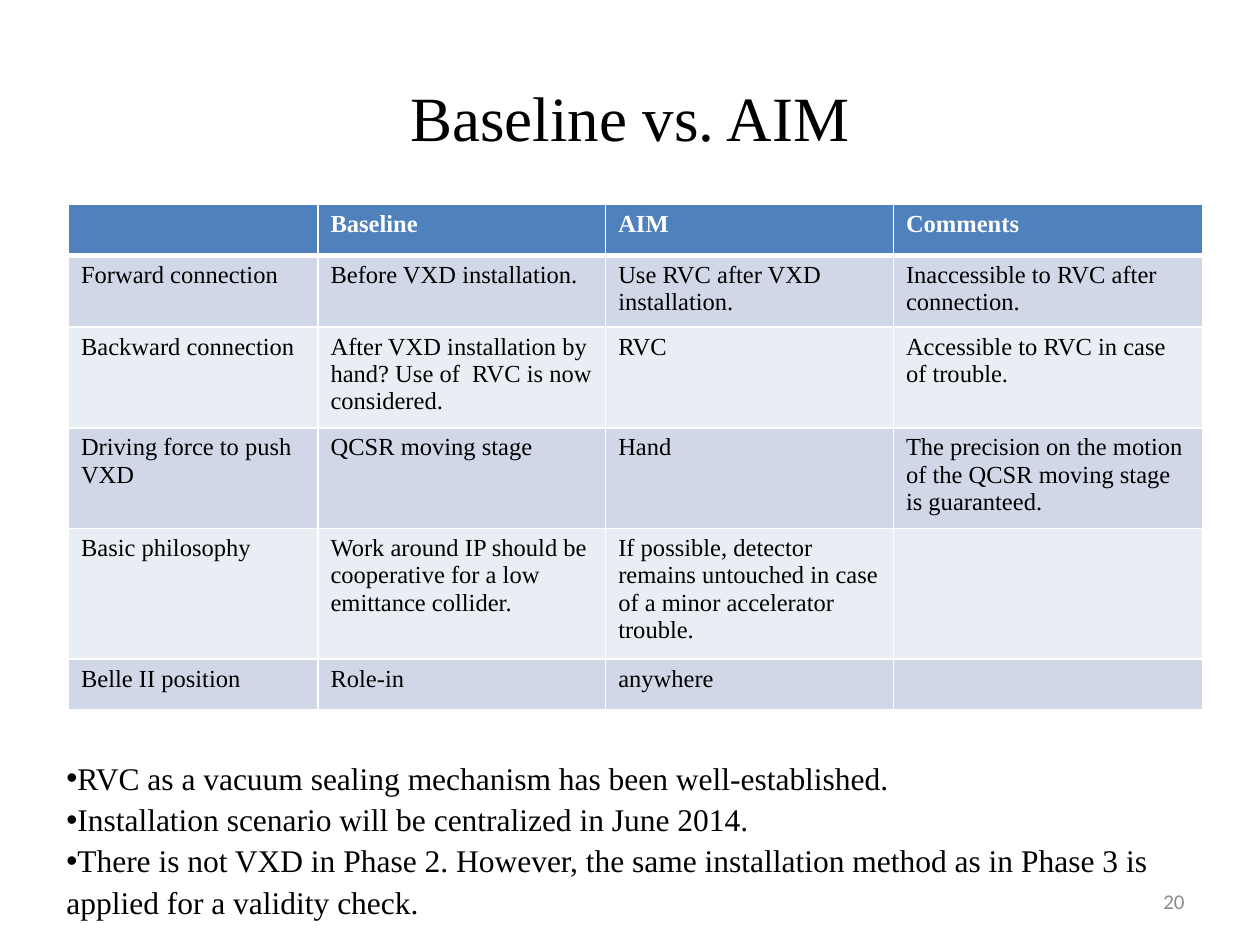
from lxml.etree import SubElement
from pptx import Presentation
from pptx.dml.color import RGBColor
from pptx.enum.text import MSO_ANCHOR, PP_ALIGN
from pptx.oxml.ns import qn
from pptx.util import Cm, Pt

BLACK = RGBColor(0x00, 0x00, 0x00)
WHITE = RGBColor(0xFF, 0xFF, 0xFF)
GREY = RGBColor(0x8C, 0x8C, 0x8C)
HEADER_BLUE = RGBColor(0x4F, 0x81, 0xBD)
BAND_DARK = RGBColor(0xD0, 0xD8, 0xE8)
BAND_LIGHT = RGBColor(0xE9, 0xED, 0xF4)
SERIF = "Times New Roman"

COLUMN_WIDTHS = [5.03, 5.8, 5.8, 6.23]
ROW_HEIGHT = 1.03
COMPARISON = [
    ["", "Baseline", "AIM", "Comments"],
    ["Forward connection", "Before VXD installation.",
     "Use RVC after VXD installation.", "Inaccessible to RVC after connection."],
    ["Backward connection",
     "After VXD installation by hand? Use of  RVC is now considered.",
     "RVC", "Accessible to RVC in case of trouble."],
    ["Driving force to push VXD", "QCSR moving stage", "Hand",
     "The precision on the motion of the QCSR moving stage is guaranteed."],
    ["Basic philosophy",
     "Work around IP should be cooperative for a low emittance collider.",
     "If possible, detector remains untouched in case of a minor accelerator trouble.",
     ""],
    ["Belle II position", "Role-in", "anywhere", ""],
]
REMARKS = [
    "RVC as a vacuum sealing mechanism has been well-established.",
    "Installation scenario will be centralized in June 2014.",
    "There is not VXD in Phase 2. However, the same installation method "
    "as in Phase 3 is applied for a validity check.",
]


def add_run(paragraph, text, size, color=BLACK, font=SERIF, bold=False):
    run = paragraph.add_run()
    run.text = text
    run.font.size = Pt(size)
    run.font.name = font
    run.font.bold = bold
    run.font.color.rgb = color


def add_text_frame(slide, left, top, width, height, anchor=MSO_ANCHOR.TOP):
    box = slide.shapes.add_textbox(Cm(left), Cm(top), Cm(width), Cm(height))
    box.text_frame.word_wrap = True
    box.text_frame.vertical_anchor = anchor
    return box.text_frame


def add_line(slide, place, text, size, alignment, **style):
    frame = add_text_frame(slide, *place, anchor=MSO_ANCHOR.MIDDLE)
    paragraph = frame.paragraphs[0]
    paragraph.alignment = alignment
    add_run(paragraph, text, size, **style)


def set_borders(cell, widths):
    properties = cell._tc.get_or_add_tcPr()
    for side, width in widths.items():
        line = SubElement(properties, qn(f"a:ln{side}"), w=str(Pt(width)))
        fill = SubElement(line, qn("a:solidFill"))
        SubElement(fill, qn("a:srgbClr"), val=str(WHITE))


def add_comparison_table(slide, left, top):
    row_count = len(COMPARISON)
    frame = slide.shapes.add_table(
        row_count, len(COLUMN_WIDTHS), Cm(left), Cm(top),
        Cm(sum(COLUMN_WIDTHS)), Cm(ROW_HEIGHT * row_count))
    table = frame.table
    for column, width in zip(table.columns, COLUMN_WIDTHS):
        column.width = Cm(width)
    for row_index, texts in enumerate(COMPARISON):
        table.rows[row_index].height = Cm(ROW_HEIGHT)
        is_header = row_index == 0
        band = BAND_DARK if row_index % 2 else BAND_LIGHT
        for column_index, text in enumerate(texts):
            cell = table.cell(row_index, column_index)
            set_borders(cell, {"L": 1, "R": 1,
                               "T": 3 if row_index == 1 else 1,
                               "B": 3 if is_header else 1})
            cell.fill.solid()
            cell.fill.fore_color.rgb = HEADER_BLUE if is_header else band
            if text:
                add_run(cell.text_frame.paragraphs[0], text, 14,
                        color=WHITE if is_header else BLACK, bold=is_header)


def add_bullets(slide, place, texts):
    frame = add_text_frame(slide, *place)
    for index, text in enumerate(texts):
        paragraph = frame.add_paragraph() if index else frame.paragraphs[0]
        paragraph.line_spacing = 1.09
        properties = paragraph._p.get_or_add_pPr()
        properties.set("marL", "0")
        properties.set("indent", "0")
        SubElement(properties, qn("a:buFont"), typeface="Arial")
        SubElement(properties, qn("a:buChar"), char="•")
        add_run(paragraph, text, 18)


def main():
    presentation = Presentation()
    presentation.slide_width = Cm(25.4)
    presentation.slide_height = Cm(19.05)
    slide = presentation.slides.add_slide(presentation.slide_layouts[6])
    add_line(slide, (1.27, 0.76, 22.86, 3.18), "Baseline vs. AIM", 36,
             PP_ALIGN.CENTER)
    add_comparison_table(slide, 1.38, 4.12)
    add_bullets(slide, (1.09, 15.11, 23.39, 3.33), REMARKS)
    add_line(slide, (18.2, 17.66, 5.93, 1.01), "20", 12, PP_ALIGN.RIGHT,
             color=GREY, font="Calibri")
    presentation.save("out.pptx")


if __name__ == "__main__":
    main()
